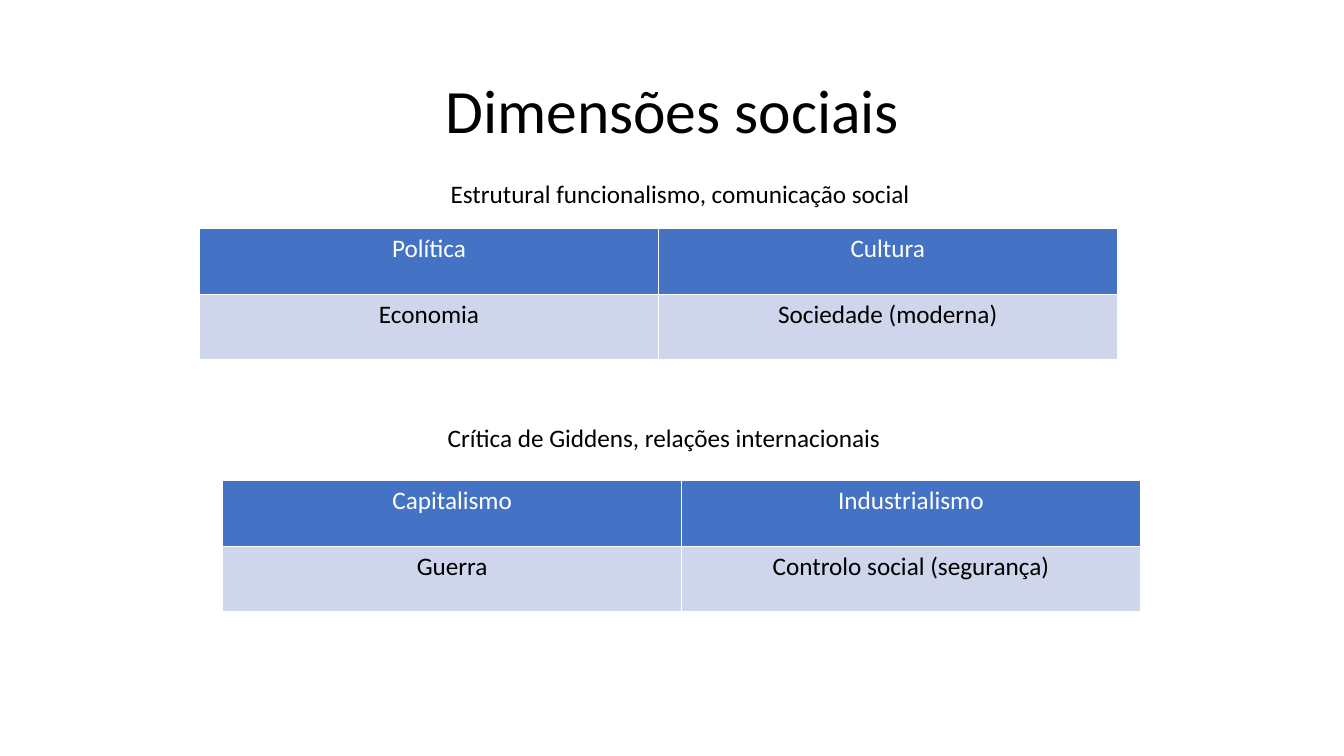
from dataclasses import dataclass

from pptx import Presentation
from pptx.dml.color import RGBColor
from pptx.enum.text import MSO_ANCHOR, MSO_AUTO_SIZE, PP_ALIGN
from pptx.util import Inches, Pt

CENTER = PP_ALIGN.CENTER
MIDDLE = MSO_ANCHOR.MIDDLE
GROW = MSO_AUTO_SIZE.SHAPE_TO_FIT_TEXT

# Content: each model has a caption and a two-by-two table, with their places
TITLE = "Dimensões sociais"
MODELS = [
    {
        "caption": "Estrutural funcionalismo, comunicação social",
        "caption_at": (3.15, 1.72),
        "cells": [["Política", "Cultura"], ["Economia", "Sociedade (moderna)"]],
        "table_at": (1.98, 2.27),
    },
    {
        "caption": "Crítica de Giddens, relações internacionais",
        "caption_at": (2.99, 4.14),
        "cells": [["Capitalismo", "Industrialismo"],
                  ["Guerra", "Controlo social (segurança)"]],
        "table_at": (2.21, 4.77),
    },
]

# Layout in inches
SLIDE_SIZE = (13.33, 7.5)
TITLE_BOX = (0.92, 0.4, 11.5, 1.45)
CAPTION_SIZE = (7.19, 0.4)
COLUMN_WIDTH, ROW_HEIGHT = 4.55, 0.65


@dataclass(frozen=True)
class Theme:
    font: str = "Calibri"
    title_size: int = 44
    text_size: int = 18
    dark: str = "000000"
    light: str = "FFFFFF"
    header_fill: str = "4472C4"
    body_fill: str = "CFD5EA"


THEME = Theme()


def write(frame, text, size, color):
    frame.text = text
    para = frame.paragraphs[0]
    para.alignment = CENTER
    font = para.runs[0].font
    font.name, font.size, font.bold = THEME.font, Pt(size), False
    font.color.rgb = RGBColor.from_string(color)
    return para


def add_title(page):
    title = page.shapes.title
    title.left, title.top, title.width, title.height = map(Inches, TITLE_BOX)
    para = write(title.text_frame, TITLE, THEME.title_size, THEME.dark)
    para.line_spacing = 0.9
    title.text_frame.vertical_anchor = MIDDLE


def add_caption(page, text, place):
    box = page.shapes.add_textbox(*map(Inches, place + CAPTION_SIZE))
    frame = box.text_frame
    frame.word_wrap = True
    frame.auto_size = GROW
    write(frame, text, THEME.text_size, THEME.dark)


def add_model_table(page, rows, place):
    row_count, column_count = len(rows), len(rows[0])
    size = (COLUMN_WIDTH * column_count, ROW_HEIGHT * row_count)
    # The default table style supplies the white borders
    table = page.shapes.add_table(
        row_count, column_count, *map(Inches, place + size)).table
    for r, row in enumerate(rows):
        fill, color = ((THEME.body_fill, THEME.dark) if r
                       else (THEME.header_fill, THEME.light))
        for c, text in enumerate(row):
            cell = table.cell(r, c)
            cell.fill.solid()
            cell.fill.fore_color.rgb = RGBColor.from_string(fill)
            write(cell.text_frame, text, THEME.text_size, color)


def main():
    deck = Presentation()
    deck.slide_width, deck.slide_height = map(Inches, SLIDE_SIZE)
    page = deck.slides.add_slide(deck.slide_layouts.get_by_name("Title Only"))
    add_title(page)
    for model in MODELS:
        add_caption(page, model["caption"], model["caption_at"])
        add_model_table(page, model["cells"], model["table_at"])
    deck.save("out.pptx")


if __name__ == "__main__":
    main()
